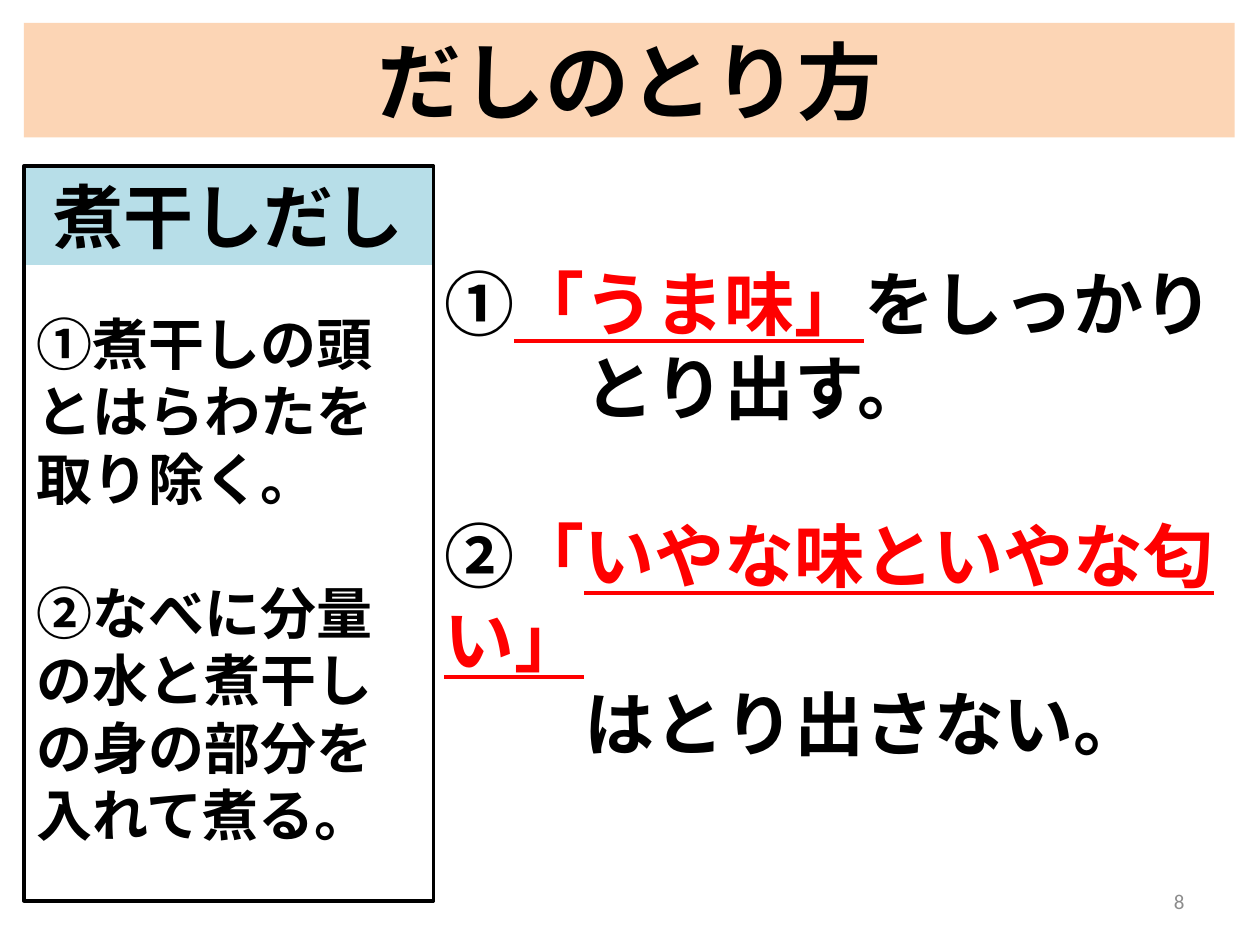
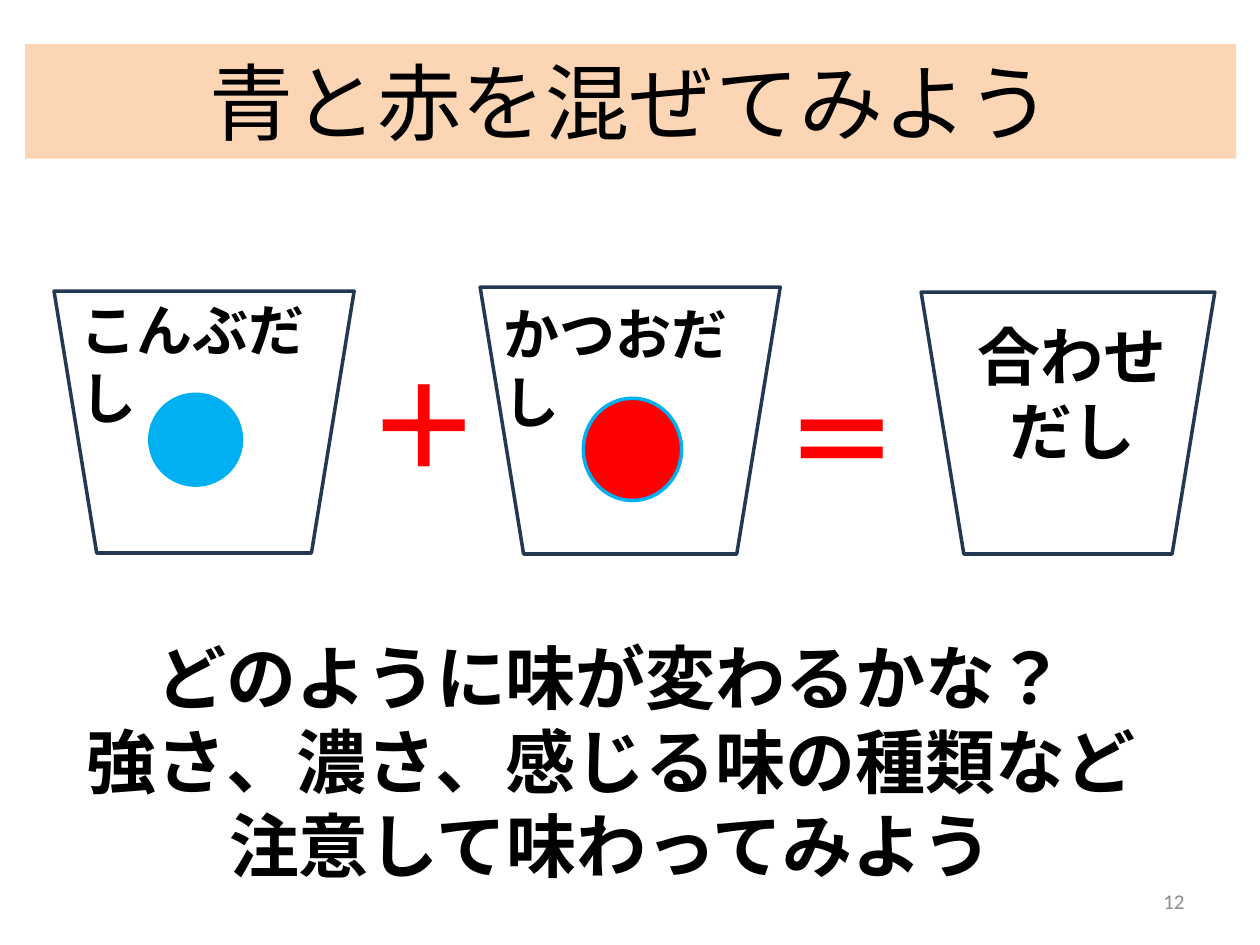
from dataclasses import dataclass, field

from lxml.etree import SubElement
from pptx import Presentation
from pptx.dml.color import RGBColor
from pptx.enum.lang import MSO_LANGUAGE_ID
from pptx.enum.shapes import MSO_SHAPE
from pptx.enum.text import MSO_ANCHOR, PP_ALIGN
from pptx.oxml.ns import qn
from pptx.shapes.autoshape import Shape
from pptx.slide import Slide
from pptx.util import Cm, Pt

BLACK = RGBColor(0x00, 0x00, 0x00)
RED = RGBColor(0xFF, 0x00, 0x00)
SKY_BLUE = RGBColor(0x00, 0xB0, 0xF0)
PEACH = RGBColor(0xFC, 0xD5, 0xB5)
PALE_BLUE = RGBColor(0xB7, 0xDE, 0xE8)
NAVY = RGBColor(0x23, 0x39, 0x53)
GREY = RGBColor(0x8C, 0x8C, 0x8C)

BODY_FONT = "Calibri"
TITLE_FONT = "Arial"
OUTLINE_WIDTH = Pt(2)


@dataclass(frozen=True)
class Box:
    """Left, top, width and height in centimetres."""
    left: float
    top: float
    width: float
    height: float

    def lengths(self) -> tuple[Cm, Cm, Cm, Cm]:
        return Cm(self.left), Cm(self.top), Cm(self.width), Cm(self.height)


@dataclass(frozen=True)
class Run:
    text: str
    color: RGBColor = BLACK
    underline: bool = False


@dataclass(frozen=True)
class Para:
    runs: list[Run]
    space_before: float = 0
    indent: float = 0


@dataclass(frozen=True)
class Style:
    size: float
    bold: bool = True
    font: str = BODY_FONT
    align: PP_ALIGN = PP_ALIGN.LEFT
    anchor: MSO_ANCHOR = MSO_ANCHOR.TOP


@dataclass(frozen=True)
class Label:
    box: Box
    style: Style
    paras: list[Para] = field(default_factory=list)


@dataclass(frozen=True)
class Figure:
    kind: MSO_SHAPE
    box: Box
    fill: RGBColor | None = None
    line: RGBColor | None = None


TITLE = Style(48, font=TITLE_FONT, align=PP_ALIGN.CENTER, anchor=MSO_ANCHOR.MIDDLE)
LIGHT_TITLE = Style(48, False, TITLE_FONT, PP_ALIGN.CENTER, MSO_ANCHOR.MIDDLE)
HEADING = Style(40, align=PP_ALIGN.CENTER)
POINT = Style(40)
STEP = Style(32)
SIGN = Style(66)
RESULT = Style(36, align=PP_ALIGN.CENTER)
PAGE_NUMBER = Style(12, False, align=PP_ALIGN.RIGHT, anchor=MSO_ANCHOR.MIDDLE)


def plain(text: str, color: RGBColor = BLACK, space_before: float = 0) -> Para:
    return Para([Run(text, color)], space_before)


def write(shape: Shape, style: Style, paras: list[Para]) -> None:
    frame = shape.text_frame
    frame.word_wrap = True
    frame.vertical_anchor = style.anchor
    for index, para in enumerate(paras):
        paragraph = frame.paragraphs[0] if index == 0 else frame.add_paragraph()
        paragraph.alignment = style.align
        if para.space_before:
            paragraph.space_before = Pt(para.space_before)
        if para.indent:
            paragraph._p.get_or_add_pPr().set("marL", str(Pt(para.indent)))
        for part in para.runs:
            run = paragraph.add_run()
            run.text = part.text
            formats = {
                "name": style.font,
                "size": Pt(style.size),
                "bold": style.bold,
                "underline": part.underline,
                "language_id": MSO_LANGUAGE_ID.JAPANESE,
            }
            for name, value in formats.items():
                setattr(run.font, name, value)
            run.font.color.rgb = part.color


def add_label(slide: Slide, label: Label) -> None:
    write(slide.shapes.add_textbox(*label.box.lengths()), label.style, label.paras)


def add_figure(slide: Slide, figure: Figure) -> Shape:
    shape = slide.shapes.add_shape(figure.kind, *figure.box.lengths())
    shape.shadow.inherit = False
    if figure.fill is None:
        shape.fill.background()
    else:
        shape.fill.solid()
        shape.fill.fore_color.rgb = figure.fill
    if figure.line is None:
        shape.line.fill.background()
    else:
        shape.line.color.rgb = figure.line
        shape.line.width = OUTLINE_WIDTH
    return shape


def add_band(slide: Slide, box: Box, fill: RGBColor, style: Style, text: str) -> None:
    band = add_figure(slide, Figure(MSO_SHAPE.RECTANGLE, box, fill))
    write(band, style, [plain(text)])


def add_cup(slide: Slide, box: Box) -> None:
    """Draw a trapezoid with its wide side on top."""
    cup = add_figure(slide, Figure(MSO_SHAPE.TRAPEZOID, box, line=NAVY))
    cup.adjustments[0] = 0.163
    cup._element.spPr.xfrm.set("flipV", "1")


def add_titled_slide(deck, title: str, style: Style, left: float, top: float,
                     number: int) -> Slide:
    slide = deck.slides.add_slide(deck.slide_layouts[6])
    add_band(slide, Box(left, top, 24.41, 2.31), PEACH, style, title)
    add_label(slide, Label(Box(18.21, 17.65, 5.92, 1.02), PAGE_NUMBER,
                           [plain(str(number), GREY)]))
    return slide


def build_method_slide(deck) -> None:
    slide = add_titled_slide(deck, "だしのとり方", TITLE, 0.48, 0.46, 8)
    add_label(slide, Label(Box(8.71, 5.13, 17.2, 8.81), POINT, [
        Para([Run("①"), Run("「うま味」", RED, True), Run("をしっかり")]),
        Para([Run("とり出す。")], indent=80),
        Para([Run("②"), Run("「", RED), Run("いやな味といやな匂い」", RED, True)],
             space_before=48),
        Para([Run("はとり出さない。")], indent=80),
    ]))
    add_band(slide, Box(0.48, 3.38, 8.26, 1.96), PALE_BLUE, HEADING, "煮干しだし")
    add_figure(slide, Figure(MSO_SHAPE.RECTANGLE, Box(0.48, 3.35, 8.26, 14.81),
                             line=BLACK))
    add_label(slide, Label(Box(0.48, 6.12, 7.42, 11.2), STEP, [
        plain("①煮干しの頭とはらわたを取り除く。"),
        plain("②なべに分量の水と煮干しの身の部分を入れて煮る。", space_before=38.4),
    ]))


def build_mixing_slide(deck) -> None:
    slide = add_titled_slide(deck, "青と赤を混ぜてみよう", LIGHT_TITLE, 0.51, 0.89, 12)
    cups = [
        Box(1.09, 5.87, 6.05, 5.28),
        Box(9.68, 5.79, 6.05, 5.38),
        Box(18.57, 5.89, 5.92, 5.28),
    ]
    for cup in cups:
        add_cup(slide, cup)

    drops = [
        Figure(MSO_SHAPE.OVAL, Box(3.02, 7.95, 1.85, 1.83), SKY_BLUE, SKY_BLUE),
        Figure(MSO_SHAPE.OVAL, Box(11.76, 8.03, 1.98, 2.06), RED, SKY_BLUE),
    ]
    for drop in drops:
        add_figure(slide, drop)

    labels = [
        Label(Box(7.14, 7.01, 1.98, 3.07), SIGN, [plain("＋", RED)]),
        Label(Box(15.57, 7.32, 1.98, 3.07), SIGN, [plain("＝", RED)]),
        Label(Box(1.37, 5.84, 6.05, 1.63), STEP, [plain("こんぶだし")]),
        Label(Box(9.91, 5.92, 6.05, 1.63), STEP, [plain("かつおだし")]),
        Label(Box(19.33, 6.27, 4.57, 3.33), RESULT, [plain("合わせだし")]),
        Label(Box(1.09, 12.67, 22.45, 5.38), HEADING, [
            plain("どのように味が変わるかな？"),
            plain("強さ、濃さ、感じる味の種類など"),
            plain("注意して味わってみよう"),
        ]),
    ]
    for label in labels:
        add_label(slide, label)


def main() -> None:
    deck = Presentation()
    deck.slide_width, deck.slide_height = Cm(25.4), Cm(19.05)
    build_method_slide(deck)
    build_mixing_slide(deck)
    deck.save("out.pptx")


if __name__ == "__main__":
    main()
